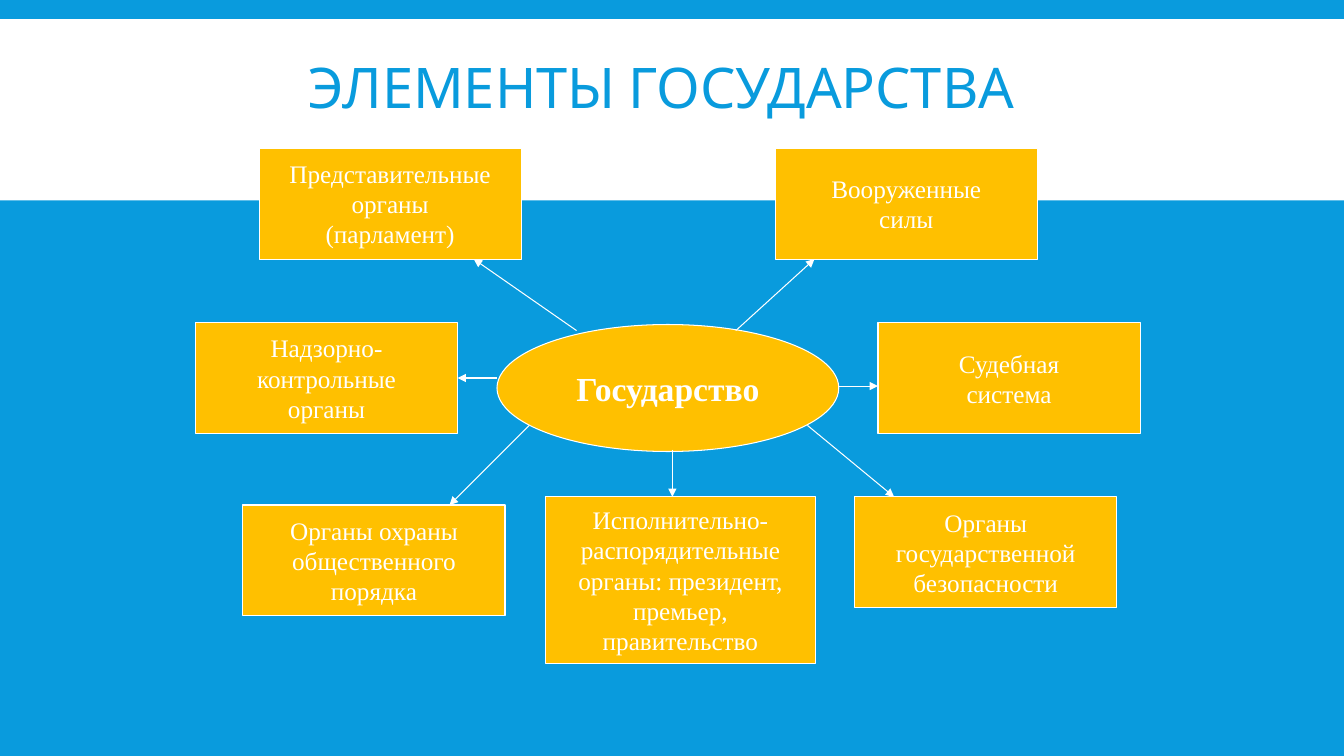
from dataclasses import dataclass

from lxml.etree import SubElement
from pptx import Presentation
from pptx.dml.color import RGBColor as RGB
from pptx.enum.shapes import MSO_CONNECTOR as CONN, MSO_SHAPE as SHAPE
from pptx.enum.text import MSO_ANCHOR as ANCHOR, PP_ALIGN as ALIGN
from pptx.oxml.ns import qn
from pptx.util import Inches, Pt


@dataclass(frozen=True)
class Theme:
    blue: RGB = RGB(0x09, 0x9B, 0xDD)
    white: RGB = RGB(0xFF, 0xFF, 0xFF)
    amber: RGB = RGB(0xFF, 0xC0, 0x00)
    title_font: str = "Cabin"
    body_font: str = "Times New Roman"
    title_size: int = 40
    centre_size: int = 24
    label_size: int = 18
    line_width: float = 0.75


THEME = Theme()
WIDTH, HEIGHT = Inches(13.333), Inches(7.5)

# All lengths are percentages of the slide's width and height.
BAND = (0, 2.53, 100, 24)
TITLE = (15.75, 3.73, 66.9, 16.67)
DIAGRAM = (14.55, 19.6)

# Inside the diagram, measured from its top left corner.
CENTRE = (22.43, 23.33, 25.43, 16.8)
BODY_SIZE = (19.5, 14.67)
TALL_SIZE = (20.1, 22)
TOP, MIDDLE, BOTTOM = 0, 23.07, 46.13

# Label, corner, size, arrow start, arrow end
BODIES = [
    ("Представительные\nорганы\n(парламент)", (4.73, TOP), BODY_SIZE,
     (28.35, 24.13), (20.7, 14.67)),
    ("Надзорно-\nконтрольные\nорганы", (0, MIDDLE), BODY_SIZE,
     (22.43, 30.4), (19.5, 30.4)),
    ("Органы охраны\nобщественного\nпорядка", (3.53, 47.2), BODY_SIZE,
     (24.83, 36.67), (18.9, 47.2)),
    ("Вооруженные\nсилы", (43.13, TOP), BODY_SIZE,
     (40.2, 24.13), (46.05, 14.67)),
    ("Судебная\nсистема", (50.78, MIDDLE), BODY_SIZE,
     (47.85, 31.47), (50.78, 31.47)),
    ("Исполнительно-\nраспорядительные\nорганы: президент,\nпремьер,\nправительство",
     (26.03, BOTTOM), TALL_SIZE, (35.48, 39.87), (35.48, BOTTOM)),
    ("Органы\nгосударственной\nбезопасности", (49.05, BOTTOM), BODY_SIZE,
     (45.53, 36.67), (51.98, BOTTOM)),
]


def to_emu(*shares):
    """Turn alternating x and y percentages into slide lengths."""
    return [int(v * (HEIGHT if i % 2 else WIDTH) / 100)
            for i, v in enumerate(shares)]


def write(sp, text, font, size, color, bold=False, wrap=False):
    tf = sp.text_frame
    tf.text = text
    tf.word_wrap = wrap
    tf.vertical_anchor = ANCHOR.MIDDLE
    for p in tf.paragraphs:
        p.alignment = ALIGN.CENTER
        for r in p.runs:
            r.font.name, r.font.size = font, Pt(size)
            r.font.color.rgb, r.font.bold = color, bold


def add_node(s, kind, box, fill, outlined=True):
    sp = s.shapes.add_shape(kind, *to_emu(*box))
    sp.shadow.inherit = False
    sp.fill.solid()
    sp.fill.fore_color.rgb = fill
    if outlined:
        sp.line.color.rgb = THEME.white
        sp.line.width = Pt(THEME.line_width)
    else:
        sp.line.fill.background()
    return sp


def add_arrow(s, start, end):
    arrow = s.shapes.add_connector(CONN.STRAIGHT, *to_emu(*start, *end))
    arrow.line.color.rgb = THEME.white
    arrow.line.width = Pt(THEME.line_width)
    SubElement(arrow.line._get_or_add_ln(), qn("a:tailEnd"), type="triangle")
    SubElement(arrow._element.spPr, qn("a:effectLst"))


def add_header(s, band, title):
    add_node(s, SHAPE.RECTANGLE, band, THEME.white, outlined=False)
    sp = s.shapes.add_textbox(*to_emu(*title))
    write(sp, "ЭЛЕМЕНТЫ ГОСУДАРСТВА", THEME.title_font, THEME.title_size,
          THEME.blue, wrap=True)
    sp.text_frame.paragraphs[0].line_spacing = 0.85


def add_diagram(s, corner):
    def place(point):
        return corner[0] + point[0], corner[1] + point[1]

    centre = add_node(s, SHAPE.OVAL, (*place(CENTRE[:2]), *CENTRE[2:]), THEME.amber)
    write(centre, "Государство", THEME.body_font, THEME.centre_size,
          THEME.white, bold=True)
    for label, point, size, start, end in BODIES:
        body = add_node(s, SHAPE.RECTANGLE, (*place(point), *size), THEME.amber)
        write(body, label, THEME.body_font, THEME.label_size, THEME.white)
        add_arrow(s, place(start), place(end))


def main():
    prs = Presentation()
    prs.slide_width, prs.slide_height = WIDTH, HEIGHT
    s = prs.slides.add_slide(prs.slide_layouts[6])
    s.background.fill.solid()
    s.background.fill.fore_color.rgb = THEME.blue
    add_header(s, BAND, TITLE)
    add_diagram(s, DIAGRAM)
    prs.save("out.pptx")


if __name__ == "__main__":
    main()
